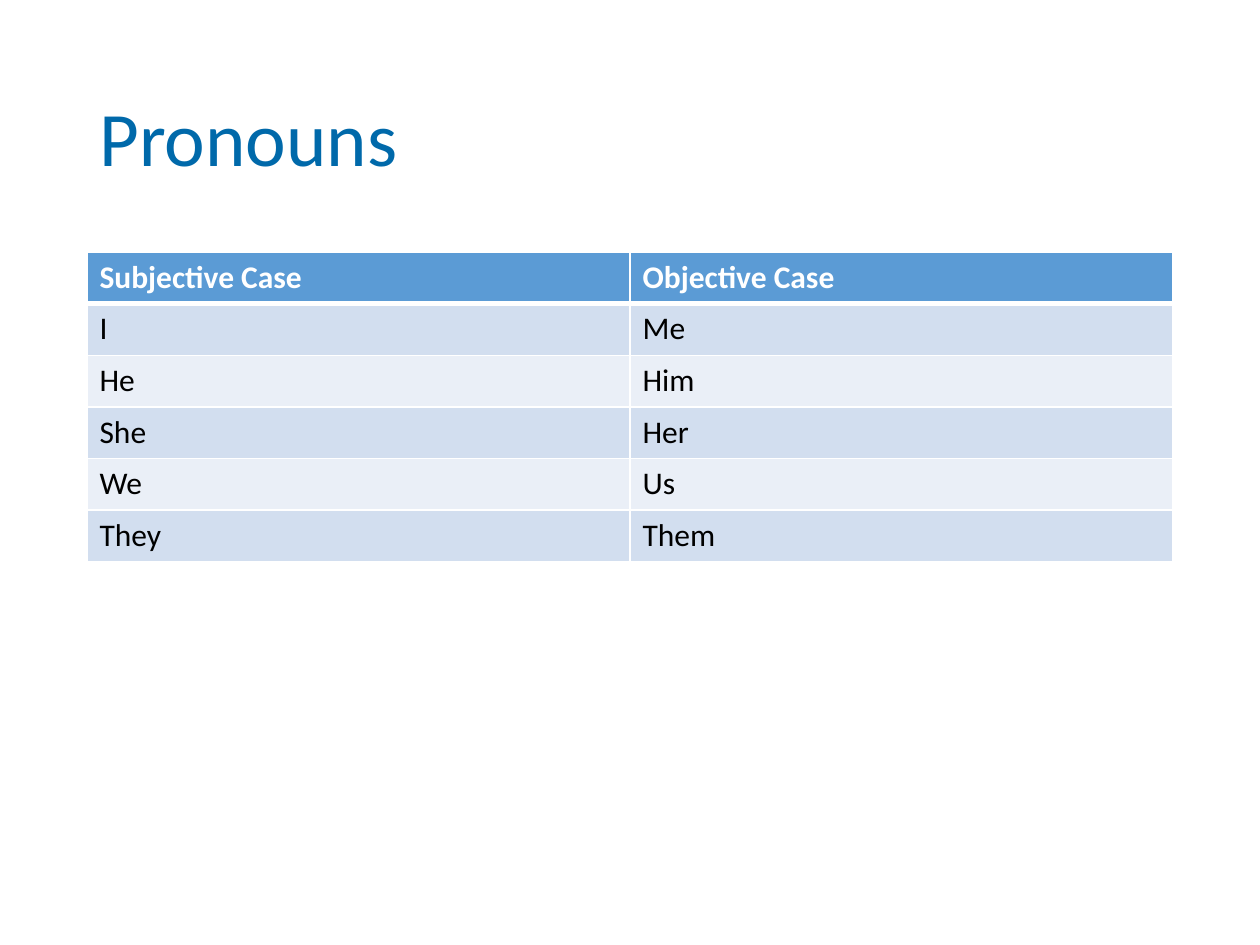
from lxml.etree import SubElement
from pptx import Presentation
from pptx.dml.color import RGBColor
from pptx.enum.text import MSO_ANCHOR
from pptx.oxml.ns import qn
from pptx.util import Inches, Pt

COLORS = {
    "title": "0069AA",
    "header": "5B9BD5",
    "odd_row": "D2DEEF",
    "even_row": "EAEFF7",
    "border": "FFFFFF",
    "header_text": "FFFFFF",
    "body_text": "000000",
}
FORMATS = {
    "title": {"name": "Calibri", "size": Pt(44), "bold": False},
    "header_text": {"name": "Calibri", "size": Pt(18), "bold": True},
    "body_text": {"name": "Calibri", "size": Pt(18), "bold": False},
}
PRONOUNS = [
    ("Subjective Case", "Objective Case"),
    ("I", "Me"),
    ("He", "Him"),
    ("She", "Her"),
    ("We", "Us"),
    ("They", "Them"),
]
SLIDE_WIDTH, SLIDE_HEIGHT = Inches(10), Inches(7.5)
MARGIN = Inches(0.69)
CONTENT_WIDTH = SLIDE_WIDTH - 2 * MARGIN
ROW_HEIGHT = Inches(0.41)


def write(paragraph, words, role):
    run = paragraph.add_run()
    run.text = words
    for attribute, value in FORMATS[role].items():
        setattr(run.font, attribute, value)
    run.font.color.rgb = RGBColor.from_string(COLORS[role])


def add_title(slide, box, words):
    frame = slide.shapes.add_textbox(*box).text_frame
    frame.word_wrap = True
    frame.vertical_anchor = MSO_ANCHOR.MIDDLE
    heading = frame.paragraphs[0]
    heading.line_spacing = 0.9
    write(heading, words, "title")


def fill_cell(cell, color):
    cell.fill.solid()
    cell.fill.fore_color.rgb = RGBColor.from_string(color)


def add_borders(cell, widths):
    """Draw the cell's edges; the lines must precede the fill in the XML."""
    properties = cell._tc.get_or_add_tcPr()
    for position, (edge, width) in enumerate(widths.items()):
        line = SubElement(properties, qn(f"a:ln{edge}"), w=str(Pt(width)))
        solid = SubElement(line, qn("a:solidFill"))
        SubElement(solid, qn("a:srgbClr"), val=COLORS["border"])
        properties.insert(position, line)


def add_pronoun_table(slide, box, rows):
    table = slide.shapes.add_table(len(rows), len(rows[0]), *box).table
    for row_index, row in enumerate(rows):
        is_header = row_index == 0
        band = "header" if is_header else "odd_row" if row_index % 2 else "even_row"
        role = "header_text" if is_header else "body_text"
        widths = {
            "L": 1,
            "R": 1,
            "T": 3 if row_index == 1 else 1,
            "B": 3 if is_header else 1,
        }
        for column_index, pronoun in enumerate(row):
            cell = table.cell(row_index, column_index)
            write(cell.text_frame.paragraphs[0], pronoun, role)
            fill_cell(cell, COLORS[band])
            add_borders(cell, widths)


def main():
    deck = Presentation()
    deck.slide_width, deck.slide_height = SLIDE_WIDTH, SLIDE_HEIGHT
    slide = deck.slides.add_slide(deck.slide_layouts[6])
    add_title(slide, (MARGIN, Inches(0.4), CONTENT_WIDTH, Inches(1.45)), "Pronouns")
    table_box = (MARGIN, Inches(2), CONTENT_WIDTH, ROW_HEIGHT * len(PRONOUNS))
    add_pronoun_table(slide, table_box, PRONOUNS)
    deck.save("out.pptx")


if __name__ == "__main__":
    main()
